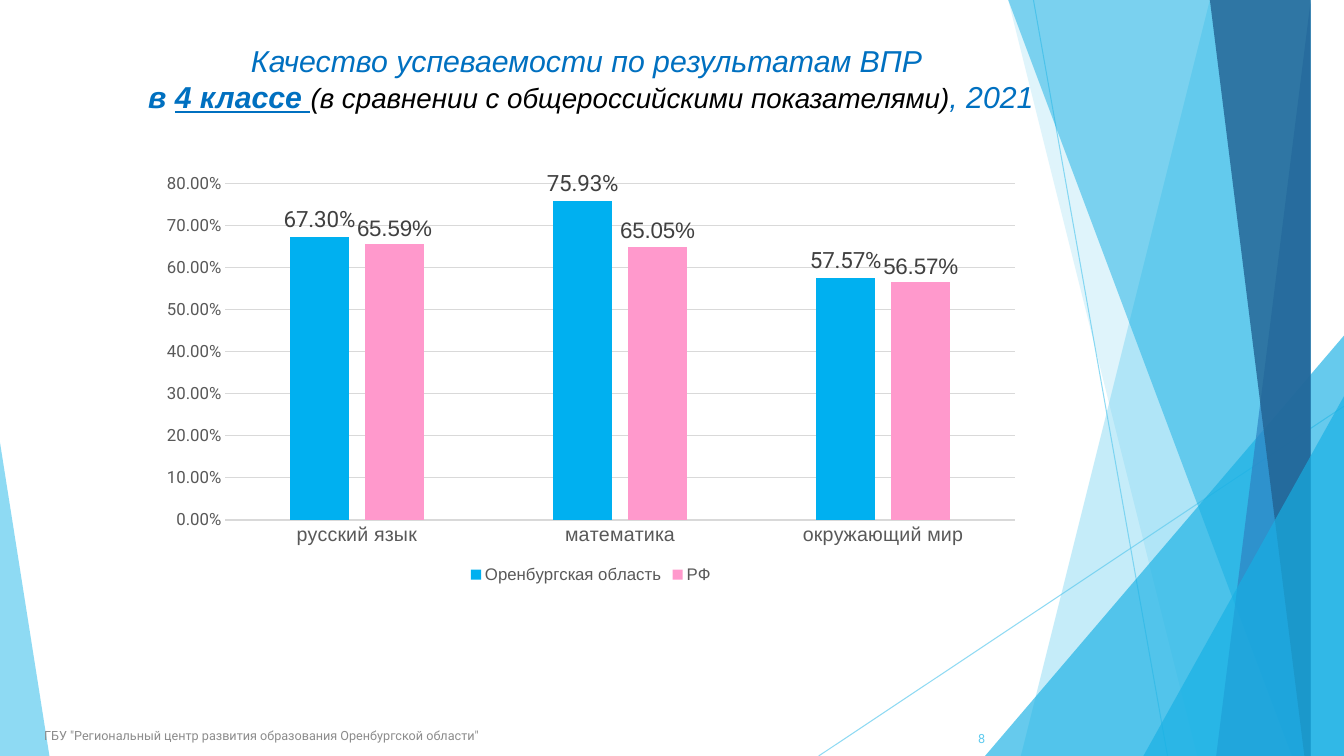
from pptx import Presentation
from pptx.chart.data import CategoryChartData
from pptx.dml.color import RGBColor
from pptx.enum.chart import XL_CHART_TYPE, XL_LABEL_POSITION, XL_LEGEND_POSITION, XL_TICK_MARK
from pptx.enum.shapes import MSO_CONNECTOR, MSO_SHAPE
from pptx.enum.text import MSO_ANCHOR, PP_ALIGN
from pptx.oxml.ns import qn
from pptx.util import Inches, Pt
from lxml.etree import SubElement


def paint(fmt, color, alpha=100):
    fmt.solid()
    fmt.fore_color.rgb = RGBColor.from_string(color)
    if alpha < 100:
        for clr in fmt._xPr.iter(qn("a:srgbClr")):
            SubElement(clr, qn("a:alpha"), val=str(alpha * 1000))


def style(font, size, color, name="Arial", bold=False, italic=False, underline=False):
    font.size = Pt(size)
    font.name = name
    font.bold, font.italic, font.underline = bold, italic, underline
    paint(font.fill, color)


prs = Presentation()
prs.slide_width, prs.slide_height = Inches(13.33), Inches(7.5)
s = prs.slides.add_slide(prs.slide_layouts[5])

for x1, y1, x2, y2 in [(10.25, 0, 11.58, 7.5), (13.33, 4.03, 8.12, 7.5)]:
    line = s.shapes.add_connector(
        MSO_CONNECTOR.STRAIGHT, Inches(x1), Inches(y1), Inches(x2), Inches(y2))
    line.line.width = Pt(0.75)
    paint(line.line.fill, "5FCBEF", 70)
    SubElement(line.element.spPr, qn("a:effectLst"))

bands = [
    ("band", 12.28, 10.04, "5FCBEF", 36),
    ("band", 10.5, 11.83, "5FCBEF", 20),
    ("triangle", 9.77, 3.33, 3.56, 1, "17B0E4", 66),
    ("band", 10.21, 12.91, "17B0E4", 50),
    ("band", 13.03, 11.92, "2E83C3", 70),
    ("band", 11.96, 13.18, "226292", 80),
    ("triangle", 11.34, 3.93, 1.99, 1, "17B0E4", 66),
    ("triangle", 0, 4.39, 0.49, 0, "5FCBEF", 70),
]
for kind, *geometry, color, alpha in bands:
    if kind == "band":
        top, bottom = geometry
        fb = s.shapes.build_freeform(top, -0.01, scale=Inches(1))
        fb.add_line_segments([(13.33, -0.01), (13.33, 7.5), (bottom, 7.5)], close=True)
        shape = fb.convert_to_shape()
    else:
        x, y, w, apex = geometry
        shape = s.shapes.add_shape(
            MSO_SHAPE.ISOSCELES_TRIANGLE, Inches(x), Inches(y), Inches(w), Inches(7.5 - y))
        shape.adjustments[0] = apex
    shape.shadow.inherit = False
    shape.line.fill.background()
    paint(shape.fill, color, alpha)

title = s.shapes.title
s.shapes.element.append(title.element)
title.left, title.top, title.width, title.height = Inches(0.34), Inches(0.37), Inches(11.04), Inches(0.78)
tf = title.text_frame
tf.word_wrap = True
tf.vertical_anchor = MSO_ANCHOR.TOP
p = tf.paragraphs[0]
p.alignment = PP_ALIGN.CENTER
for text, size, color, bold, underline in [
    ("Качество успеваемости по результатам ВПР ", 21.6, "0070C0", False, False),
    ("в ", 21.6, "0070C0", True, False),
    ("4 классе ", 21.6, "0070C0", True, True),
    ("(в сравнении с общероссийскими показателями)", 19.8, "000000", False, False),
    (", 2021", 21.6, "0070C0", False, False),
]:
    if text == "в ":
        p.add_line_break()
    r = p.add_run()
    r.text = text
    style(r.font, size, color, bold=bold, italic=True, underline=underline)

data = CategoryChartData(number_format="0.00%")
data.categories = ["русский язык", "математика", "окружающий мир"]
data.add_series("Оренбургская область", [0.673, 0.7593, 0.5757])
data.add_series("РФ", [0.6559, 0.6505, 0.5657])
chart = s.shapes.add_chart(
    XL_CHART_TYPE.COLUMN_CLUSTERED, Inches(1.48), Inches(1.64), Inches(8.76), Inches(4.19), data).chart
style(chart.font, 10, "000000", "Roboto")
chart.has_title = False
chart.has_legend = True
chart.legend.position = XL_LEGEND_POSITION.BOTTOM
chart.legend.include_in_layout = False
style(chart.legend.font, 12, "595959")

cat, val = chart.category_axis, chart.value_axis
for axis, size, font in [(cat, 14, "Arial"), (val, 12, "Roboto")]:
    axis.major_tick_mark = axis.minor_tick_mark = XL_TICK_MARK.NONE
    style(axis.tick_labels.font, size, "595959", font)
val.minimum_scale, val.maximum_scale, val.major_unit = 0, 0.8, 0.1
val.tick_labels.number_format = "0.00%"
val.tick_labels.number_format_is_linked = False
val.format.line.fill.background()
for rule in [cat.format.line, val.major_gridlines.format.line]:
    rule.width = Pt(0.75)
    paint(rule.fill, "D9D9D9")

plot = chart.plots[0]
plot.gap_width, plot.overlap = 219, -27
plot.vary_by_categories = False
for series, color, font in zip(plot.series, ["00B0F0", "FF99CC"], ["Roboto", "Arial"]):
    paint(series.format.fill, color)
    labels = series.data_labels
    labels.show_value = True
    labels.number_format = "0.00%"
    labels.number_format_is_linked = False
    labels.position = XL_LABEL_POSITION.OUTSIDE_END
    style(labels.font, 16, "404040", font)

for text, x, y, w, color, align in [
    ('ГБУ "Региональный центр развития образования Оренбургской области"',
     0.34, 7.1, 6.89, "8C8C8C", PP_ALIGN.LEFT),
    ("8", 9.12, 7.13, 0.75, "5FCBEF", PP_ALIGN.RIGHT),
]:
    tf = s.shapes.add_textbox(Inches(x), Inches(y), Inches(w), Inches(0.4)).text_frame
    tf.word_wrap = True
    tf.vertical_anchor = MSO_ANCHOR.MIDDLE
    p = tf.paragraphs[0]
    p.alignment = align
    r = p.add_run()
    r.text = text
    style(r.font, 9, color, "Roboto")

prs.save("out.pptx")
